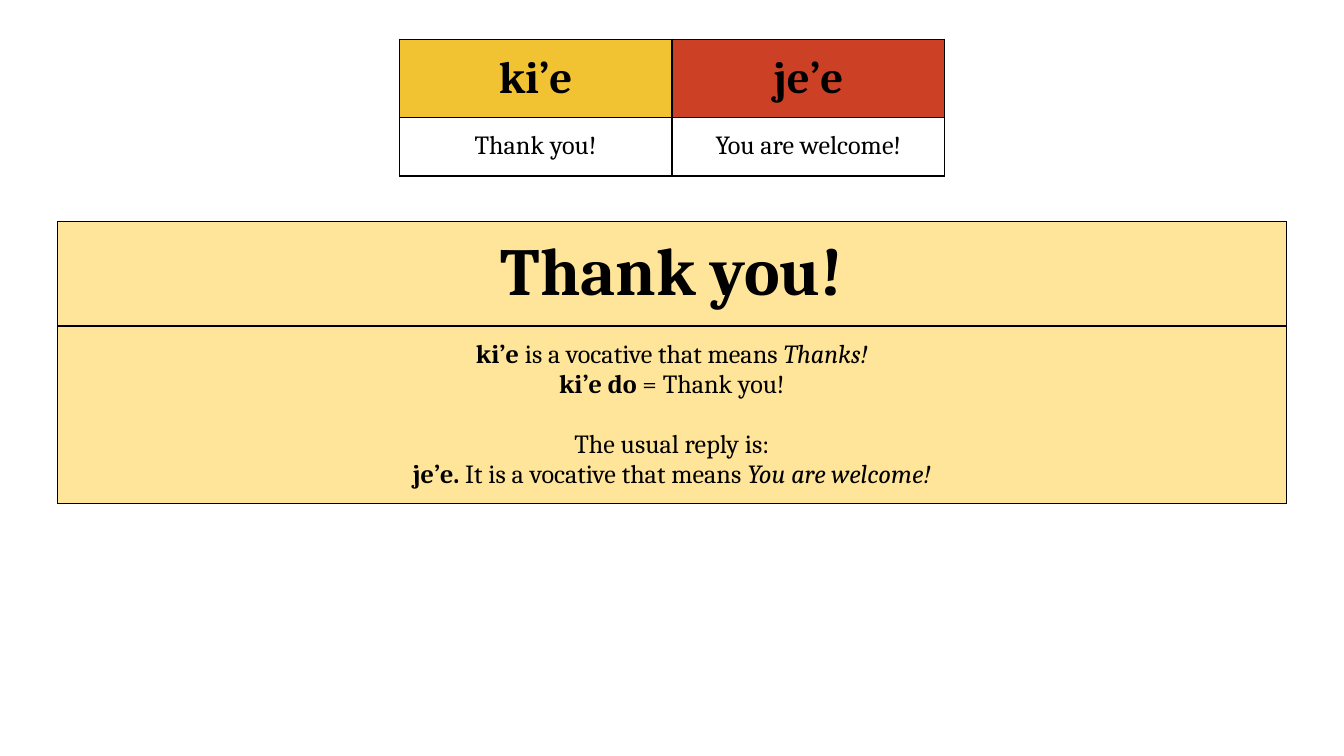
from lxml.etree import fromstring
from pptx import Presentation
from pptx.dml.color import RGBColor
from pptx.enum.text import PP_ALIGN
from pptx.oxml.ns import nsdecls
from pptx.util import Inches, Pt

BLACK = RGBColor(0x00, 0x00, 0x00)
CREAM = RGBColor(0xFF, 0xE5, 0x99)
GOLD = RGBColor(0xF1, 0xC2, 0x32)
RED = RGBColor(0xCC, 0x41, 0x25)

SLIDE_WIDTH = Inches(10)
SLIDE_HEIGHT = SLIDE_WIDTH * 9 // 16
CELL_MARGIN = Inches(0.1)
BODY_SIZE = 14
LESSON_COLUMNS = 6

PLAIN, BOLD, ITALIC = "plain", "bold", "italic"


def across(percent):
    return round(SLIDE_WIDTH * percent / 100)


def down(percent):
    return round(SLIDE_HEIGHT * percent / 100)


def add_borders(cell):
    properties = cell._tc.get_or_add_tcPr()
    for position, side in enumerate("LRTB"):
        line = fromstring(
            f'<a:ln{side} {nsdecls("a")} w="{Pt(0.75)}"><a:solidFill>'
            f'<a:srgbClr val="{BLACK}"/></a:solidFill></a:ln{side}>')
        properties.insert(position, line)


def add_plain_table(slide, box, row_heights, column_count):
    """Add a bordered, unfilled table; box is left, top, width in percent."""
    left, top, width = box
    frame = slide.shapes.add_table(
        len(row_heights), column_count, across(left), down(top),
        across(width), down(sum(row_heights)))
    table = frame.table
    table.first_row = table.horz_banding = False
    for row, height in zip(table.rows, row_heights):
        row.height = down(height)
    for cell in table.iter_cells():
        cell.fill.background()
        add_borders(cell)
    return table


def write_cell(cell, paragraphs, size, fill=None):
    """Fill a cell with paragraphs, each a list of (text, style) runs."""
    cell.margin_left = cell.margin_right = CELL_MARGIN
    cell.margin_top = cell.margin_bottom = CELL_MARGIN
    if fill is not None:
        cell.fill.solid()
        cell.fill.fore_color.rgb = fill
    text_frame = cell.text_frame
    for index, runs in enumerate(paragraphs):
        paragraph = text_frame.add_paragraph() if index else text_frame.paragraphs[0]
        paragraph.alignment = PP_ALIGN.CENTER
        for text, style in runs:
            run = paragraph.add_run()
            run.text = text
            run.font.name = "Cambria"
            run.font.size = Pt(size)
            run.font.color.rgb = BLACK
            run.font.bold = style == BOLD
            run.font.italic = style == ITALIC


def add_lesson(slide, box):
    table = add_plain_table(slide, box, (13.8, 23.5), LESSON_COLUMNS)
    for row in range(2):
        table.cell(row, 0).merge(table.cell(row, LESSON_COLUMNS - 1))
    write_cell(table.cell(0, 0), [[("Thank you!", BOLD)]], 36, CREAM)
    explanation = [
        [("ki’e", BOLD), (" is a vocative that means ", PLAIN), ("Thanks!", ITALIC)],
        [("ki’e do", BOLD), (" = Thank you!", PLAIN)],
        [("The usual reply is:", PLAIN)],
        [("je’e.", BOLD), (" It is a vocative that means ", PLAIN),
         ("You are welcome!", ITALIC)],
    ]
    body = table.cell(1, 0)
    write_cell(body, explanation, BODY_SIZE, CREAM)
    body.text_frame.paragraphs[2].space_before = Pt(16.4)


def add_vocabulary(slide, box):
    words = [("ki’e", "Thank you!", GOLD), ("je’e", "You are welcome!", RED)]
    table = add_plain_table(slide, box, (10.3, 7.7), len(words))
    for column, (word, meaning, color) in enumerate(words):
        write_cell(table.cell(0, column), [[(word, BOLD)]], 24, color)
        write_cell(table.cell(1, column), [[(meaning, PLAIN)]], BODY_SIZE)


def main():
    presentation = Presentation()
    presentation.slide_width = SLIDE_WIDTH
    presentation.slide_height = SLIDE_HEIGHT
    slide = presentation.slides.add_slide(presentation.slide_layouts[6])
    add_lesson(slide, (4.3, 29.33, 91.4))
    add_vocabulary(slide, (29.7, 5.2, 40.6))
    presentation.save("out.pptx")


if __name__ == "__main__":
    main()
